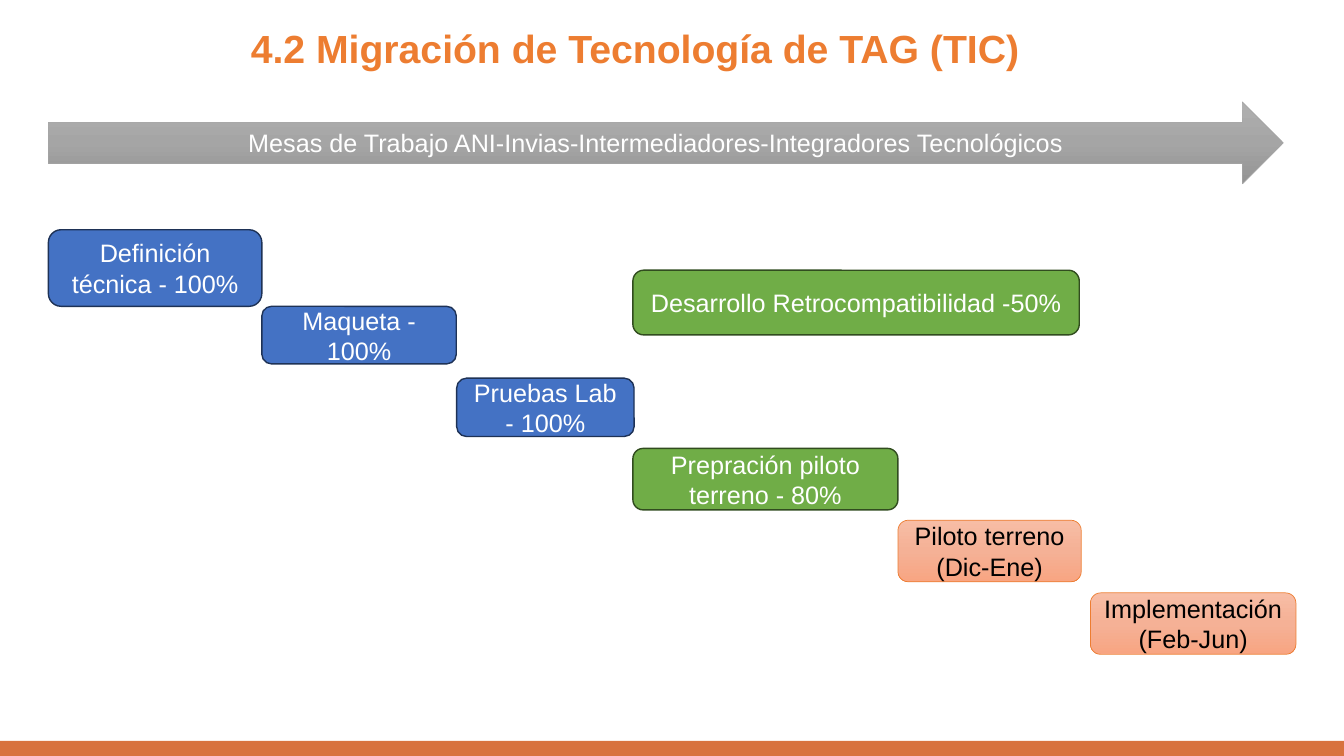
"""Build the TAG technology migration slide."""
from copy import deepcopy
from dataclasses import dataclass

from pptx import Presentation
from pptx.dml.color import RGBColor
from pptx.enum.shapes import MSO_SHAPE
from pptx.enum.text import MSO_ANCHOR, MSO_AUTO_SIZE, PP_ALIGN
from pptx.oxml.ns import qn
from pptx.shapes.autoshape import Shape
from pptx.slide import Slide
from pptx.util import Cm, Pt

WHITE = RGBColor(0xFF, 0xFF, 0xFF)
BLACK = RGBColor(0x00, 0x00, 0x00)
ORANGE = RGBColor(0xED, 0x7D, 0x31)
BAR_ORANGE = RGBColor(0xD8, 0x72, 0x3E)
BLUE = RGBColor(0x44, 0x72, 0xC4)
NAVY = RGBColor(0x1E, 0x32, 0x56)
GREEN = RGBColor(0x70, 0xAD, 0x47)
DARK_GREEN = RGBColor(0x31, 0x4C, 0x1F)
GRAY = RGBColor(0xA5, 0xA5, 0xA5)
GRAYS = (RGBColor(0xAF, 0xAF, 0xAF), GRAY, RGBColor(0x93, 0x93, 0x93))
PEACHES = (RGBColor(0xF7, 0xBD, 0xA5), RGBColor(0xF5, 0xB1, 0x96),
           RGBColor(0xF8, 0xA5, 0x82))


@dataclass(frozen=True)
class Style:
    """Colours and outline of a shape; several fills make a gradient."""
    fills: tuple[RGBColor, ...]
    line: RGBColor | None = None
    line_width: float = 1
    color: RGBColor = WHITE


@dataclass(frozen=True)
class Block:
    """A shape with its text and its box in centimetres."""
    text: str
    left: float
    top: float
    width: float
    height: float
    style: Style
    kind: MSO_SHAPE = MSO_SHAPE.ROUNDED_RECTANGLE


DONE = Style((BLUE,), NAVY)
ONGOING = Style((GREEN,), DARK_GREEN)
PLANNED = Style(PEACHES, ORANGE, 0.5, BLACK)

BLOCKS = (
    Block("", 0, 18.67, 33.87, 0.38, Style((BAR_ORANGE,)), MSO_SHAPE.RECTANGLE),
    Block("Definición técnica - 100%", 1.22, 5.79, 5.38, 1.93, DONE),
    Block("Maqueta - 100%", 6.6, 7.72, 4.9, 1.45, DONE),
    Block("Pruebas Lab - 100%", 11.51, 9.53, 4.47, 1.47, DONE),
    Block("Prepración piloto terreno - 80%", 15.95, 11.3, 6.68, 1.55, ONGOING),
    Block("Piloto terreno (Dic-Ene)", 22.63, 13.11, 4.62, 1.55, PLANNED),
    Block("Implementación\n(Feb-Jun)", 27.48, 14.94, 5.18, 1.55, PLANNED),
    Block("Desarrollo Retrocompatibilidad -50%", 15.95, 6.81, 11.25, 1.63, ONGOING),
    Block("Mesas de Trabajo ANI-Invias-Intermediadores-Integradores Tecnológicos",
          1.22, 2.57, 31.12, 2.06, Style(GRAYS, GRAY, 0.5), MSO_SHAPE.RIGHT_ARROW),
)


def write(sp: Shape, text: str, *, size: float = 18, color: RGBColor = WHITE,
          bold: bool = False, anchor: MSO_ANCHOR = MSO_ANCHOR.MIDDLE,
          spacing: float = 1.0) -> None:
    """Put centred text in a shape, one paragraph per line."""
    tf = sp.text_frame
    tf.text = text
    tf.word_wrap = True
    tf.auto_size = MSO_AUTO_SIZE.NONE
    tf.vertical_anchor = anchor
    for p in tf.paragraphs:
        p.alignment = PP_ALIGN.CENTER
        p.line_spacing = spacing
        for r in p.runs:
            r.font.name = "Arial"
            r.font.size = Pt(size)
            r.font.bold = bold
            r.font.color.rgb = color


def paint(sp: Shape, style: Style) -> None:
    """Apply fill and outline to a shape."""
    sp.shadow.inherit = False
    if len(style.fills) == 1:
        sp.fill.solid()
        sp.fill.fore_color.rgb = style.fills[0]
    else:
        sp.fill.gradient()
        sp.fill.gradient_angle = 270
        stops = next(sp._element.spPr.iter(qn("a:gsLst")))
        while len(stops) < len(style.fills):
            stops.append(deepcopy(stops[0]))
        for i, (stop, color) in enumerate(zip(sp.fill.gradient_stops, style.fills)):
            stop.position = i / (len(style.fills) - 1)
            stop.color.rgb = color
    if style.line is None:
        sp.line.fill.background()
    else:
        sp.line.color.rgb = style.line
        sp.line.width = Pt(style.line_width)


def add_block(s: Slide, block: Block) -> None:
    """Draw one block on the slide."""
    box = (Cm(v) for v in (block.left, block.top, block.width, block.height))
    sp = s.shapes.add_shape(block.kind, *box)
    paint(sp, block.style)
    if block.text:
        write(sp, block.text, color=block.style.color)


def add_title(s: Slide, text: str) -> None:
    """Place and format the title placeholder."""
    sp = s.shapes.title
    sp.left, sp.top, sp.width, sp.height = Cm(5.69), Cm(0.71), Cm(20.9), Cm(1.22)
    write(sp, text, size=28, color=ORANGE, bold=True,
          anchor=MSO_ANCHOR.BOTTOM, spacing=0.9)


def main() -> None:
    """Create and save the presentation."""
    prs = Presentation()
    prs.slide_width, prs.slide_height = Cm(33.87), Cm(19.05)
    s = prs.slides.add_slide(prs.slide_layouts[5])
    add_title(s, "4.2 Migración de Tecnología de TAG (TIC) ")
    for block in BLOCKS:
        add_block(s, block)
    prs.save("out.pptx")


if __name__ == "__main__":
    main()
